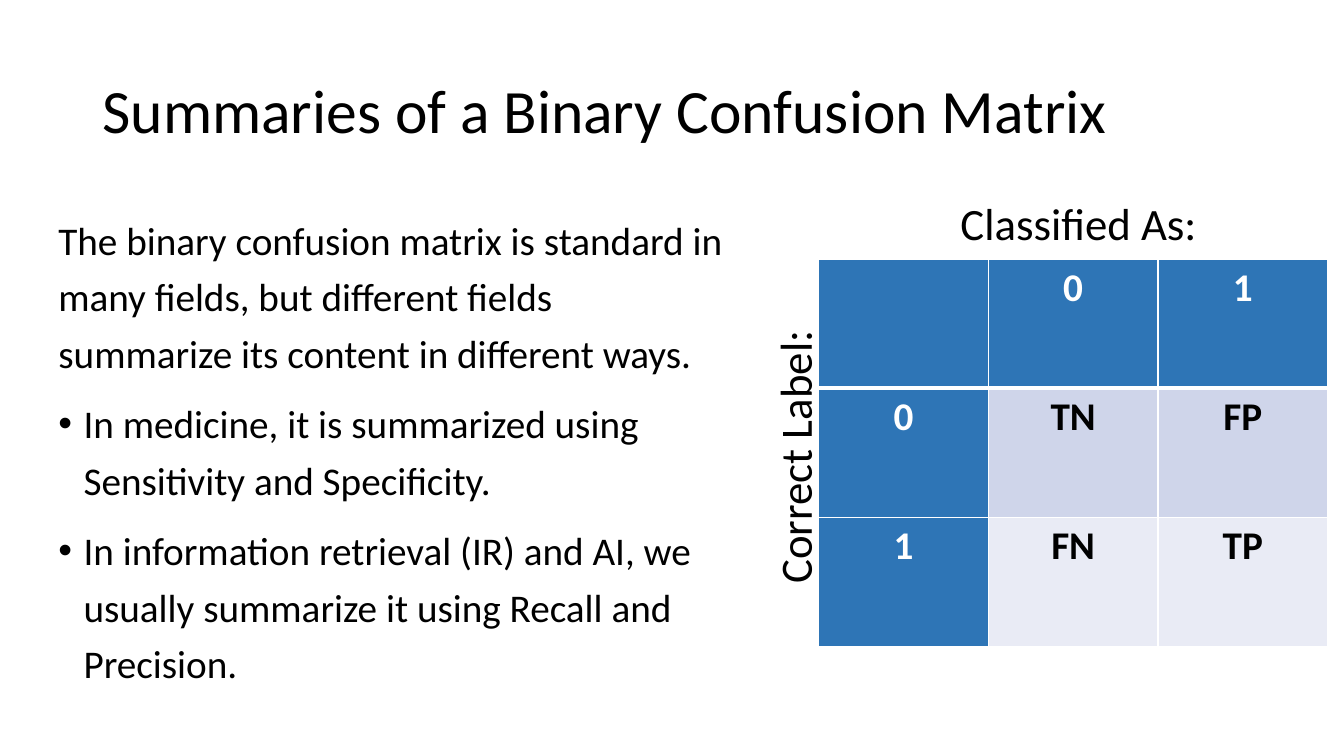
from lxml import etree
from pptx import Presentation
from pptx.dml.color import RGBColor
from pptx.enum.text import MSO_ANCHOR, MSO_AUTO_SIZE, PP_ALIGN
from pptx.oxml.ns import qn
from pptx.util import Pt

LEFT, CENTER = PP_ALIGN.LEFT, PP_ALIGN.CENTER
TOP, MIDDLE = MSO_ANCHOR.TOP, MSO_ANCHOR.MIDDLE
NO_FIT = MSO_AUTO_SIZE.NONE
GROW = MSO_AUTO_SIZE.SHAPE_TO_FIT_TEXT
FONT = "Calibri"
BLACK, WHITE, BLUE = "000000", "FFFFFF", "2E75B6"
BANDS = ["CFD5EA", "E9EBF5"]
INTRO = ("The binary confusion matrix is standard in many fields, "
         "but different fields summarize its content in different ways.")
USES = [
    "In medicine, it is summarized using Sensitivity and Specificity.",
    "In information retrieval (IR) and AI, we usually summarize it "
    "using Recall and Precision.",
]
MATRIX = [["", "0", "1"], ["0", "TN", "FP"], ["1", "FN", "TP"]]


def color(code):
    return RGBColor.from_string(code)


def add_run(para, text, size, code=BLACK, bold=False):
    run = para.add_run()
    run.text = text
    font = run.font
    font.name, font.size, font.bold = FONT, Pt(size), bold
    font.color.rgb = color(code)


def place(shape, left, top, width, height):
    shape.left, shape.top = Pt(left), Pt(top)
    shape.width, shape.height = Pt(width), Pt(height)


def set_title(shape, text):
    place(shape, 66, 28.75, 828, 104.4)
    frame = shape.text_frame
    frame.auto_size, frame.vertical_anchor = NO_FIT, MIDDLE
    para = frame.paragraphs[0]
    para.alignment, para.line_spacing = LEFT, 0.9
    add_run(para, text, 44)


def set_mark(para, mark):
    props = para._p.get_or_add_pPr()
    indent = 18 if mark else 0
    props.set("marL", str(Pt(indent)))
    props.set("indent", str(Pt(-indent)))
    if mark:
        font = etree.SubElement(props, qn("a:buFont"))
        font.set("typeface", "Arial")
        etree.SubElement(props, qn("a:buChar")).set("char", mark)
    else:
        etree.SubElement(props, qn("a:buNone"))


def set_body(shape, intro, items):
    place(shape, 34.5, 144, 492.5, 375)
    frame = shape.text_frame
    frame.auto_size, frame.vertical_anchor = NO_FIT, TOP
    for i, text in enumerate([intro, *items]):
        para = frame.add_paragraph() if i else frame.paragraphs[0]
        set_mark(para, "•" if i else None)
        para.alignment, para.line_spacing = LEFT, 1.2
        para.space_before = Pt(10 if i else 0)
        add_run(para, text, 28)


def add_edge(props, side, width):
    line = etree.SubElement(props, qn(f"a:ln{side}"))
    line.set("w", str(Pt(width)))
    fill = etree.SubElement(line, qn("a:solidFill"))
    etree.SubElement(fill, qn("a:srgbClr")).set("val", WHITE)


def set_cell(cell, text, row, col):
    head = row == 0 or col == 0
    props = cell._tc.get_or_add_tcPr()
    for side in "LRTB":
        thick = (row, side) in [(0, "B"), (1, "T")]
        add_edge(props, side, 3 if thick else 1)
    cell.fill.solid()
    cell.fill.fore_color.rgb = color(BLUE if head else BANDS[row - 1])
    para = cell.text_frame.paragraphs[0]
    para.alignment = CENTER
    if text:
        add_run(para, text, 28, WHITE if head else BLACK, True)


def add_matrix(slide, data):
    size = len(data)
    frame = slide.shapes.add_table(
        size, size, Pt(584.75), Pt(185), Pt(363.6), Pt(276.6))
    table = frame.table
    for col in table.columns:
        col.width = Pt(121.2)
    for row in table.rows:
        row.height = Pt(92.2)
    for r, line in enumerate(data):
        for c, text in enumerate(line):
            set_cell(table.cell(r, c), text, r, c)


def add_label(slide, text, left, top, width, turn=0):
    box = slide.shapes.add_textbox(Pt(left), Pt(top), Pt(width), Pt(46))
    box.rotation = turn
    frame = box.text_frame
    frame.word_wrap, frame.auto_size = False, GROW
    add_run(frame.paragraphs[0], text, 32)


def main():
    deck = Presentation()
    deck.slide_width, deck.slide_height = Pt(960), Pt(540)
    slide = deck.slides.add_slide(deck.slide_layouts[1])
    set_title(slide.shapes.title, "Summaries of a Binary Confusion Matrix")
    set_body(slide.placeholders[1], INTRO, USES)
    add_matrix(slide, MATRIX)
    add_label(slide, "Classified As:", 679, 136, 185)
    add_label(slide, "Correct Label:", 468.7, 302.4, 197.3, 270)
    deck.save("out.pptx")


if __name__ == "__main__":
    main()
